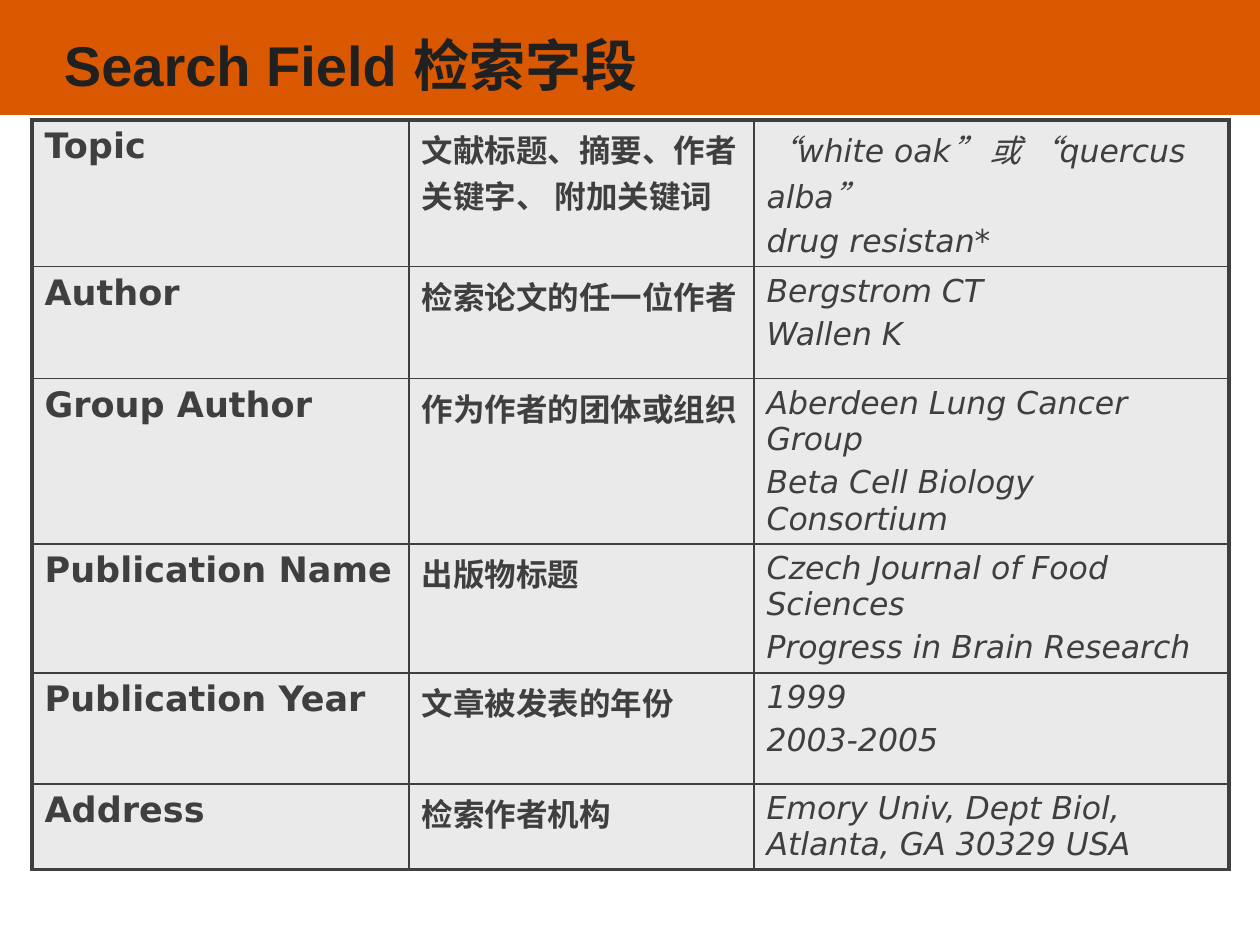
"""Build the slide of search fields with their meanings and sample queries."""
from lxml import etree
from pptx import Presentation
from pptx import util as u
from pptx.dml.color import RGBColor
from pptx.enum import lang, shapes, text
from pptx.oxml import ns

PX = 7257
COLORS = {"band": "DA5800", "title": "202020", "ink": "3F3F3F", "cell": "EAEAEA"}
OUTER, INNER = 2.25, 1
COLUMNS = [377, 345, 475]
FIELDS = [
    (146, "Topic", "文献标题、摘要、作者关键字、 附加关键词",
     ["“white oak” 或 “quercus alba”", "drug resistan*"]),
    (112, "Author", "检索论文的任一位作者", ["Bergstrom CT", "Wallen K"]),
    (165, "Group Author", "作为作者的团体或组织",
     ["Aberdeen Lung Cancer Group", "Beta Cell Biology Consortium"]),
    (129, "Publication Name", "出版物标题",
     ["Czech Journal of Food Sciences", "Progress in Brain Research"]),
    (111, "Publication Year", "文章被发表的年份", ["1999", "2003-2005"]),
    (86, "Address", "检索作者机构", ["Emory Univ, Dept Biol, Atlanta, GA 30329 USA"]),
]


def px(length):
    """Turn px into EMU."""
    return u.Emu(length * PX)


def color(name):
    """Look up a colour by its role."""
    return RGBColor.from_string(COLORS[name])


def add_run(paragraph, words, size, face, ink, bold=True, italic=False):
    """Append one formatted run."""
    run = paragraph.add_run()
    run.text = words
    font = run.font
    font.size, font.name, font.bold, font.italic = u.Pt(size), face, bold, italic
    font.color.rgb = color(ink)
    font.language_id = lang.MSO_LANGUAGE_ID.SIMPLIFIED_CHINESE


def add_heading(slide, left, top, width, height):
    """Place the coloured band with the title on it."""
    title = slide.shapes.title
    band = slide.shapes.add_shape(
        shapes.MSO_SHAPE.RECTANGLE, px(left), px(top), px(width), px(height))
    band.shadow.inherit = False
    band.fill.solid()
    band.fill.fore_color.rgb = color("band")
    band.line.fill.background()
    title.element.addprevious(band.element)

    title.left, title.top = px(left + 64), px(top + 15)
    title.width, title.height = px(1133), px(height - 17)
    frame = title.text_frame
    frame.margin_left = frame.margin_top = frame.margin_right = frame.margin_bottom = 0
    frame.vertical_anchor = text.MSO_ANCHOR.MIDDLE
    frame.auto_size = text.MSO_AUTO_SIZE.NONE
    frame.word_wrap = True
    paragraph = frame.paragraphs[0]
    paragraph.alignment = text.PP_ALIGN.LEFT
    add_run(paragraph, "Search Field 检索字段", 32, "Arial", "title")


def set_borders(cell, widths):
    """Draw the left, right, top and bottom borders of a cell."""
    properties = cell._tc.get_or_add_tcPr()
    for side, width in zip("LRTB", widths):
        line = etree.SubElement(properties, ns.qn(f"a:ln{side}"), w=str(u.Pt(width)))
        fill = etree.SubElement(line, ns.qn("a:solidFill"))
        etree.SubElement(fill, ns.qn("a:srgbClr"), val=COLORS["ink"])


def fill_cell(cell, lines, size, bold, italic):
    """Shade a cell and write one paragraph for each line."""
    cell.fill.solid()
    cell.fill.fore_color.rgb = color("cell")
    frame = cell.text_frame
    for index, words in enumerate(lines):
        paragraph = frame.add_paragraph() if index else frame.paragraphs[0]
        if index:
            paragraph.space_before = u.Pt(3.6)
        add_run(paragraph, words, size, "DejaVu Sans", "ink", bold, italic)


def add_field_table(slide, left, top):
    """Place the table of field names, meanings and examples."""
    heights = [field[0] for field in FIELDS]
    table = slide.shapes.add_table(
        len(FIELDS), len(COLUMNS), px(left), px(top),
        px(sum(COLUMNS)), px(sum(heights))).table
    table.first_row = table.horz_banding = False
    for column, width in zip(table.columns, COLUMNS):
        column.width = px(width)
    last_row, last_column = len(FIELDS) - 1, len(COLUMNS) - 1
    for r, (height, name, meaning, examples) in enumerate(FIELDS):
        table.rows[r].height = px(height)
        contents = [([name], 20, True, False), ([meaning], 18, True, False),
                    (examples, 18, False, True)]
        for c, content in enumerate(contents):
            cell = table.cell(r, c)
            edges = (c == 0, c == last_column, r == 0, r == last_row)
            set_borders(cell, [OUTER if edge else INNER for edge in edges])
            fill_cell(cell, *content)


def main():
    """Build and save the slide."""
    deck = Presentation()
    deck.slide_width, deck.slide_height = px(1260), px(945)
    slide = deck.slides.add_slide(deck.slide_layouts[5])
    add_heading(slide, 0, 0, 1260, 115)
    add_field_table(slide, 32, 120)
    deck.save("out.pptx")


if __name__ == "__main__":
    main()
